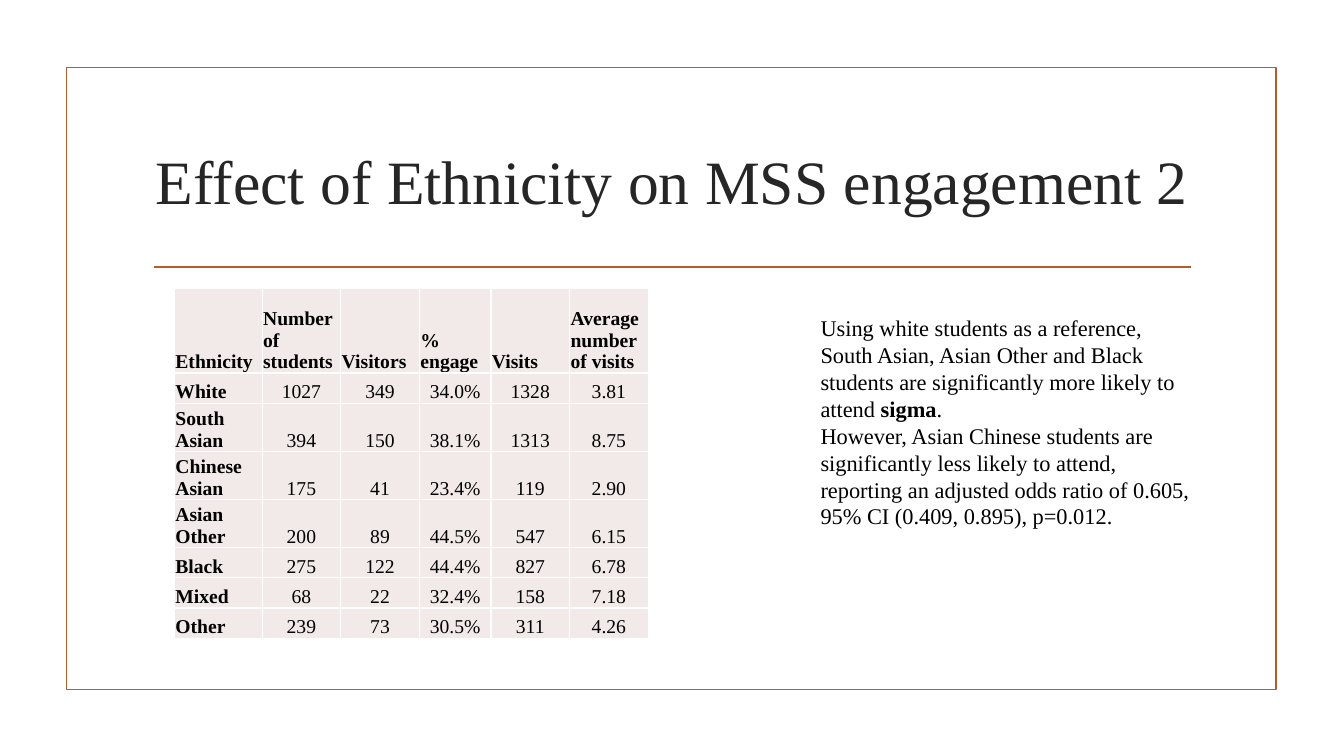
from lxml.etree import SubElement
from pptx import Presentation
from pptx.dml.color import RGBColor
from pptx.enum.shapes import MSO_CONNECTOR, MSO_SHAPE
from pptx.enum.text import MSO_ANCHOR, MSO_AUTO_SIZE, PP_ALIGN
from pptx.oxml.ns import qn
from pptx.util import Inches, Pt

FONT = "Times New Roman"
RUST = RGBColor(0xB1, 0x5E, 0x28)
CHARCOAL = RGBColor(0x26, 0x26, 0x26)
BLACK = RGBColor(0, 0, 0)
WHITE = RGBColor(0xFF, 0xFF, 0xFF)
BLUSH = RGBColor(0xF2, 0xEA, 0xE8)


def add_run(paragraph, text, size, color, bold=False):
    run = paragraph.add_run()
    run.text = text
    run.font.name = FONT
    run.font.size = Pt(size)
    run.font.bold = bold
    run.font.color.rgb = color


def add_borders(cell, color):
    properties = cell._tc.get_or_add_tcPr()
    for side in ("a:lnL", "a:lnR", "a:lnT", "a:lnB"):
        border = SubElement(properties, qn(side), w=str(Pt(1)))
        fill = SubElement(border, qn("a:solidFill"))
        SubElement(fill, qn("a:srgbClr"), val=str(color))


prs = Presentation()
prs.slide_width = Inches(13.33)
prs.slide_height = Inches(7.5)
slide = prs.slides.add_slide(prs.slide_layouts[5])

# Frame and rule under the title
frame = slide.shapes.add_shape(MSO_SHAPE.RECTANGLE, Inches(0.66), Inches(0.67), Inches(12), Inches(6.17))
frame.shadow.inherit = False
frame.fill.background()
frame.line.color.rgb = RUST
frame.line.width = Pt(1.25)

title_rule = slide.shapes.add_connector(
    MSO_CONNECTOR.STRAIGHT, Inches(1.53), Inches(2.65), Inches(11.81), Inches(2.65))
title_rule.line.color.rgb = RUST
title_rule.line.width = Pt(1.25)
SubElement(title_rule._element.spPr, qn("a:effectLst"))

# Title
title = slide.shapes.title
title.left, title.top = Inches(1.42), Inches(1.07)
title.width, title.height = Inches(10.5), Inches(1.43)
title.text_frame.vertical_anchor = MSO_ANCHOR.MIDDLE
heading = title.text_frame.paragraphs[0]
heading.alignment = PP_ALIGN.CENTER
add_run(heading, "Effect of Ethnicity on MSS engagement 2", 44, CHARCOAL)

# Findings
findings = slide.shapes.add_textbox(Inches(8.04), Inches(3.07), Inches(3.87), Inches(1.99))
findings_text = findings.text_frame
findings_text.word_wrap = True
findings_text.auto_size = MSO_AUTO_SIZE.SHAPE_TO_FIT_TEXT
more_likely = findings_text.paragraphs[0]
add_run(more_likely, "Using white students as a reference, South Asian, Asian Other and Black "
        "students are significantly more likely to attend ", 16, BLACK)
add_run(more_likely, "sigma", 16, BLACK, bold=True)
add_run(more_likely, ".", 16, BLACK)
less_likely = findings_text.add_paragraph()
add_run(less_likely, "However, Asian Chinese students are significantly less likely to attend, "
        "reporting an adjusted odds ratio of 0.605, 95% CI (0.409, 0.895), p=0.012.", 16, BLACK)

# Engagement table
engagement = [
    ("Ethnicity", "Number of students", "Visitors", "% engage", "Visits", "Average number of visits"),
    ("White", "1027", "349", "34.0%", "1328", "3.81"),
    ("South Asian", "394", "150", "38.1%", "1313", "8.75"),
    ("Chinese Asian", "175", "41", "23.4%", "119", "2.90"),
    ("Asian Other", "200", "89", "44.5%", "547", "6.15"),
    ("Black", "275", "122", "44.4%", "827", "6.78"),
    ("Mixed", "68", "22", "32.4%", "158", "7.18"),
    ("Other", "239", "73", "30.5%", "311", "4.26"),
]
column_widths = [0.87, 0.78, 0.78, 0.71, 0.78, 0.78]
table = slide.shapes.add_table(
    len(engagement), len(column_widths), Inches(1.73), Inches(2.86), Inches(4.7), Inches(3.46)).table
table.horz_banding = False
for column, width in zip(table.columns, column_widths):
    column.width = Inches(width)

for r, record in enumerate(engagement):
    table.rows[r].height = Inches(0.84 if r == 0 else 0.3)
    for c, value in enumerate(record):
        cell = table.cell(r, c)
        is_label = r == 0 or c == 0
        add_borders(cell, WHITE)
        cell.fill.solid()
        cell.fill.fore_color.rgb = BLUSH
        cell.vertical_anchor = MSO_ANCHOR.BOTTOM
        cell.margin_left = cell.margin_right = cell.margin_top = Inches(0.01)
        cell.margin_bottom = 0
        entry = cell.text_frame.paragraphs[0]
        entry.alignment = PP_ALIGN.LEFT if is_label else PP_ALIGN.CENTER
        add_run(entry, value, 14, BLACK, bold=is_label)

prs.save("out.pptx")
